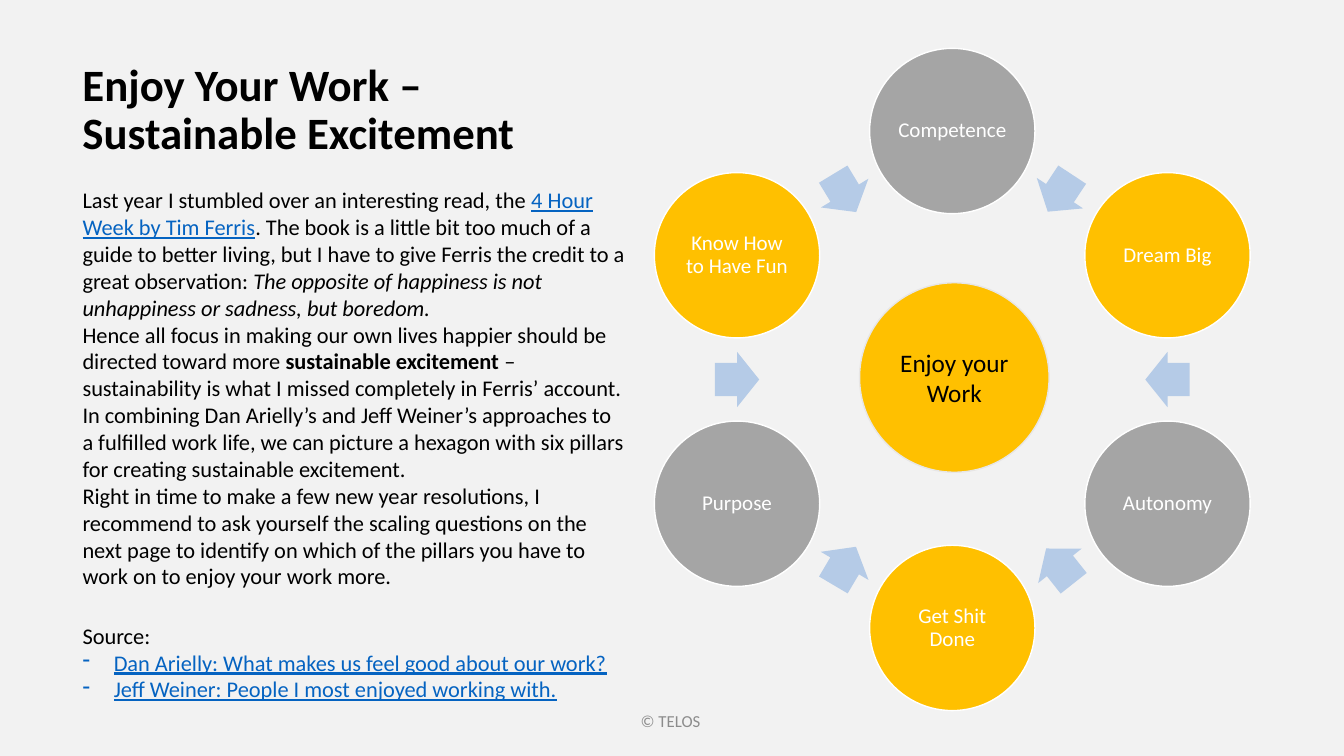
from math import cos, radians, sin

from lxml.etree import SubElement
from pptx import Presentation
from pptx.dml.color import RGBColor
from pptx.enum.shapes import MSO_SHAPE
from pptx.enum.text import MSO_ANCHOR, PP_ALIGN
from pptx.oxml.ns import qn
from pptx.util import Inches, Pt

BLACK, WHITE, LINK = "000000", "FFFFFF", "0563C1"
GOLD, GREY, ARROW = "FFC000", "A5A5A5", "B5CBE7"
LINKED = {"color": LINK, "underline": True}

TITLE = [[("Enjoy Your Work –", {})], [("Sustainable Excitement", {})]]
BODY = [
    [
        ("Last year I stumbled over an interesting read, the ", {}),
        ("4 Hour Week by Tim Ferris", LINKED),
        (". The book is a little bit too much of a guide to better living, but I have "
         "to give Ferris the credit to a great observation: ", {}),
        ("The opposite of happiness is not unhappiness or sadness, but boredom.",
         {"italic": True}),
    ],
    [
        ("Hence all focus in making our own lives happier should be directed toward more ", {}),
        ("sustainable excitement", {"bold": True}),
        (" – sustainability is what I missed completely in Ferris’ account.", {}),
    ],
    [("In combining Dan Arielly’s and Jeff Weiner’s approaches to a fulfilled work life, "
      "we can picture a hexagon with six pillars for creating sustainable excitement.", {})],
    [("Right in time to make a few new year resolutions, I recommend to ask yourself the "
      "scaling questions on the next page to identify on which of the pillars you have to "
      "work on to enjoy your work more.", {})],
]
SOURCES = [
    "Dan Arielly: What makes us feel good about our work?",
    "Jeff Weiner: People I most enjoyed working with.",
]
PILLARS = [
    ("Competence", 123.4),
    ("Dream Big", 180),
    ("Autonomy", 231.6),
    ("Get Shit Done", 300.6),
    ("Purpose", 0),
    ("Know How to Have Fun", 58.8),
]


def rgb(value):
    return RGBColor.from_string(value)


def write(frame, paragraphs, base, **layout):
    for number, spans in enumerate(paragraphs):
        para = frame.paragraphs[0] if number == 0 else frame.add_paragraph()
        for name, value in layout.items():
            setattr(para, name, value)
        for text, changes in spans:
            span = para.add_run()
            span.text = text
            style = {"name": "Calibri", "color": BLACK, **base, **changes}
            span.font.color.rgb = rgb(style.pop("color"))
            for name, value in style.items():
                setattr(span.font, name, value)


def add_text(page, box, paragraphs, base, anchor=MSO_ANCHOR.TOP, **layout):
    frame = page.shapes.add_textbox(*map(Inches, box)).text_frame
    frame.word_wrap = True
    frame.vertical_anchor = anchor
    write(frame, paragraphs, base, **layout)
    return frame


def add_centred(page, kind, center, size, fill, outline=None):
    left, top = (middle - length / 2 for middle, length in zip(center, size))
    shape = page.shapes.add_shape(kind, *map(Inches, (left, top, *size)))
    shape.shadow.inherit = False
    shape.fill.solid()
    shape.fill.fore_color.rgb = rgb(fill)
    if outline:
        shape.line.color.rgb = rgb(outline)
        shape.line.width = Pt(1)
    else:
        shape.line.fill.background()
    return shape


def add_circle(page, center, diameter, fill, outline, label, base, inset, **layout):
    circle = add_centred(page, MSO_SHAPE.OVAL, center, (diameter, diameter), fill, outline)
    frame = circle.text_frame
    frame.word_wrap = True
    frame.vertical_anchor = MSO_ANCHOR.MIDDLE
    for side in ("left", "right", "top", "bottom"):
        setattr(frame, f"margin_{side}", Inches(inset))
    write(frame, [[(label, {})]], base, alignment=PP_ALIGN.CENTER, **layout)


def on_ring(center, radius, degrees):
    angle = radians(degrees)
    return center[0] + radius * sin(angle), center[1] - radius * cos(angle)


def add_hexagon(page, box):
    left, top, width, height = box
    center = left + width / 2, top + height / 2
    diameter = 1.64
    radius = (height - diameter) / 2
    for number, (label, turn) in enumerate(PILLARS):
        degrees = 60 * number
        add_circle(page, on_ring(center, radius, degrees), diameter,
                   GOLD if number % 2 else GREY, WHITE, label,
                   {"size": Pt(15), "color": WHITE}, 0.02, line_spacing=0.9)
        middle = on_ring(center, radius * cos(radians(30)), degrees + 30)
        arrow = add_centred(page, MSO_SHAPE.RIGHT_ARROW, middle, (0.44, 0.55), ARROW)
        arrow.adjustments[0] = 0.6
        arrow.rotation = turn
    add_circle(page, (center[0] + 0.02, center[1] - 0.02), 1.88, GOLD, "E7E6E6",
               "Enjoy your Work", {"size": Pt(18)}, 0.1)


def add_sources(page, box):
    paragraphs = [[("Source:", {})]] + [[(source, LINKED)] for source in SOURCES]
    frame = add_text(page, box, paragraphs, {"size": Pt(16)})
    for para in frame.paragraphs[1:]:
        properties = para._p.get_or_add_pPr()
        properties.set("marL", str(Inches(0.31)))
        properties.set("indent", str(-Inches(0.31)))
        SubElement(properties, qn("a:buChar"), char="-")


def add_title(page, box):
    add_text(page, box, TITLE, {"size": Pt(32), "bold": True},
             MSO_ANCHOR.BOTTOM, line_spacing=0.9)


def add_footer(page, box):
    add_text(page, box, [[("© TELOS ", {})]], {"size": Pt(12), "color": "8C8C8C"},
             MSO_ANCHOR.MIDDLE, alignment=PP_ALIGN.CENTER)


def add_body(page, box):
    add_text(page, box, BODY, {"size": Pt(16)})


def main():
    deck = Presentation()
    deck.slide_width, deck.slide_height = Inches(13.33), Inches(7.5)
    page = deck.slides.add_slide(deck.slide_layouts[6])
    page.background.fill.solid()
    page.background.fill.fore_color.rgb = rgb("F2F2F2")
    add_hexagon(page, (6.49, 0.48, 5.91, 6.57))
    add_sources(page, (0.72, 6.12, 9.05, 1.18))
    add_title(page, (0.72, 0.49, 11.5, 1.14))
    add_footer(page, (4.42, 6.95, 4.5, 0.4))
    add_body(page, (0.72, 1.8, 5.59, 4.14))
    deck.save("out.pptx")


if __name__ == "__main__":
    main()
